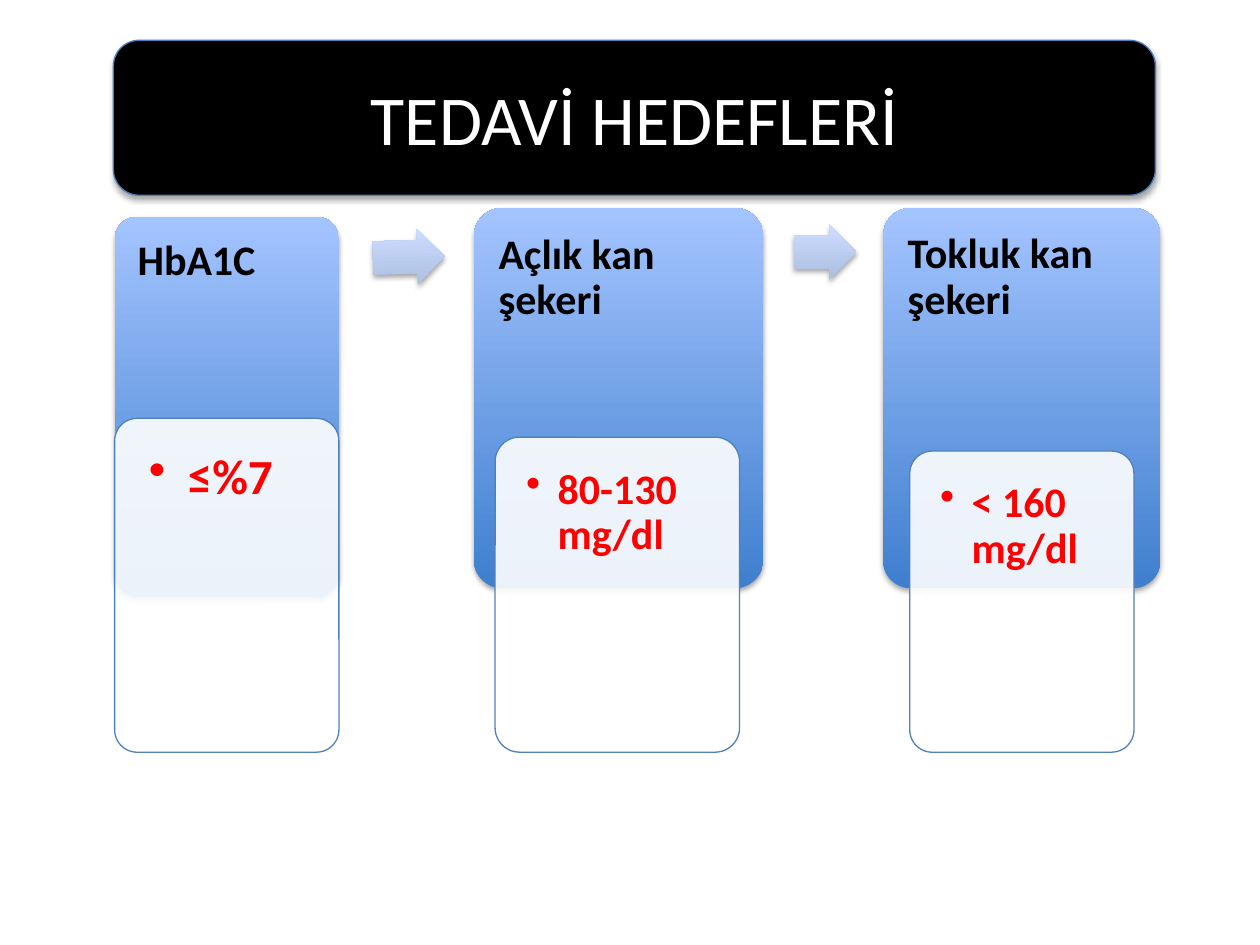
import lxml.etree
import pptx
import pptx.dml.color
import pptx.enum.shapes
import pptx.enum.text
import pptx.oxml
import pptx.oxml.ns
import pptx.util

Inches = pptx.util.Inches
Pt = pptx.util.Pt
RGBColor = pptx.dml.color.RGBColor
SHAPE = pptx.enum.shapes.MSO_SHAPE
ANCHOR = pptx.enum.text.MSO_ANCHOR
ALIGN = pptx.enum.text.PP_ALIGN
qn = pptx.oxml.ns.qn

BLACK = RGBColor(0x00, 0x00, 0x00)
WHITE = RGBColor(0xFF, 0xFF, 0xFF)
RED = RGBColor(0xFF, 0x00, 0x00)
BANNER_EDGE = RGBColor(0x4B, 0x7E, 0xBC)
VALUE_EDGE = RGBColor(0x4F, 0x81, 0xBD)
CARD_BLUES = RGBColor(0x3F, 0x7F, 0xCE), RGBColor(0xA4, 0xC4, 0xFF)
ARROW_BLUES = RGBColor(0xAD, 0xBF, 0xE1), RGBColor(0xCC, 0xDD, 0xFF)

FONT = "Calibri"
VALUE_BOTTOM = 5.97
BANNER = 0.9, 0.32, 8.27, 1.23

# heading, heading box, value, value left, top and width, value size, inset, indent
TARGETS = [
    ("HbA1C", (0.91, 1.72, 1.78, 3.02), "≤%7", (0.91, 3.32, 1.78), 28, 0.22, 0.31),
    ("Açlık kan şekeri", (3.76, 1.65, 2.3, 3.02),
     "80-130 mg/dl", (3.93, 3.47, 1.94), 24, 0.19, 0.25),
    ("Tokluk kan şekeri", (7.01, 1.65, 2.2, 3.02),
     "< 160 mg/dl", (7.22, 3.58, 1.78), 24, 0.19, 0.25),
]
ARROWS = [((2.96, 1.82, 0.57, 0.44), -1.4), ((6.3, 1.78, 0.5, 0.44), 0)]


def add_panel(slide, kind, box, adjustments=()):
    panel = slide.shapes.add_shape(kind, *map(Inches, box))
    panel.shadow.inherit = False
    for index, value in enumerate(adjustments):
        panel.adjustments[index] = value
    return panel


def set_edge(panel, color):
    panel.line.color.rgb = color
    panel.line.width = Pt(0.75)


def set_gradient(panel, colors):
    panel.line.fill.background()
    panel.fill.gradient()
    panel.fill.gradient_angle = 90
    for stop, color in zip(panel.fill.gradient_stops, colors):
        stop.color.rgb = color


def drop_shadow(panel):
    effects = panel.element.spPr.find(qn("a:effectLst"))
    shadow = lxml.etree.SubElement(
        effects, qn("a:outerShdw"), blurRad=str(Pt(3.1)), dist=str(Pt(1.8)),
        dir="5400000", rotWithShape="0")
    color = lxml.etree.SubElement(shadow, qn("a:srgbClr"), val=str(BLACK))
    lxml.etree.SubElement(color, qn("a:alpha"), val="35000")


def write_text(panel, text, size, color, inset):
    frame = panel.text_frame
    frame.word_wrap = True
    frame.vertical_anchor = ANCHOR.TOP
    frame.margin_left = frame.margin_right = Inches(inset)
    frame.margin_top = frame.margin_bottom = Inches(inset)
    paragraph = frame.paragraphs[0]
    paragraph.text = text
    paragraph.alignment = ALIGN.LEFT
    paragraph.line_spacing = 0.9
    paragraph.font.name = FONT
    paragraph.font.size = Pt(size)
    paragraph.font.bold = True
    paragraph.font.color.rgb = color
    return paragraph


def add_bullet(paragraph, indent):
    properties = paragraph._p.get_or_add_pPr()
    properties.set("marL", str(Inches(indent)))
    properties.set("indent", str(-Inches(indent)))
    bullet = pptx.oxml.parse_xml(
        '<a:buChar xmlns:a="http://schemas.openxmlformats.org/drawingml/2006/main" char="•"/>')
    properties.find(qn("a:defRPr")).addprevious(bullet)


def add_banner(slide, text):
    banner = add_panel(slide, SHAPE.ROUNDED_RECTANGLE, BANNER)
    banner.fill.solid()
    banner.fill.fore_color.rgb = BLACK
    set_edge(banner, BANNER_EDGE)
    drop_shadow(banner)

    title = slide.shapes.title
    title.element.addprevious(banner.element)
    title.left, title.top, title.width, title.height = map(Inches, BANNER)
    title.text_frame.vertical_anchor = ANCHOR.MIDDLE
    heading = title.text_frame.paragraphs[0]
    heading.text = text
    heading.alignment = ALIGN.CENTER
    heading.font.name = FONT
    heading.font.size = Pt(40)
    heading.font.color.rgb = WHITE


def add_heading_card(slide, text, box):
    card = add_panel(slide, SHAPE.ROUNDED_RECTANGLE, box, [0.1])
    set_gradient(card, CARD_BLUES)
    drop_shadow(card)
    write_text(card, text, 24, BLACK, 0.13)


def add_value_card(slide, text, place, size, inset, indent):
    left, top, width = place
    card = add_panel(slide, SHAPE.ROUNDED_RECTANGLE,
                     (left, top, width, VALUE_BOTTOM - top), [0.1])
    card.fill.solid()
    card.fill.fore_color.rgb = WHITE
    color = card.element.spPr.find(qn("a:solidFill")).find(qn("a:srgbClr"))
    lxml.etree.SubElement(color, qn("a:alpha"), val="90000")
    set_edge(card, VALUE_EDGE)
    add_bullet(write_text(card, text, size, RED, inset), indent)


def add_arrow(slide, box, rotation):
    arrow = add_panel(slide, SHAPE.RIGHT_ARROW, box, [0.6, 0.5])
    arrow.rotation = rotation
    set_gradient(arrow, ARROW_BLUES)
    drop_shadow(arrow)


def main():
    deck = pptx.Presentation()
    deck.slide_width, deck.slide_height = Inches(10), Inches(7.5)
    slide = deck.slides.add_slide(deck.slide_layouts[5])
    add_banner(slide, "TEDAVİ HEDEFLERİ")
    for heading, box, value, place, size, inset, indent in TARGETS:
        add_heading_card(slide, heading, box)
        add_value_card(slide, value, place, size, inset, indent)
    for box, rotation in ARROWS:
        add_arrow(slide, box, rotation)
    deck.save("out.pptx")


if __name__ == "__main__":
    main()
